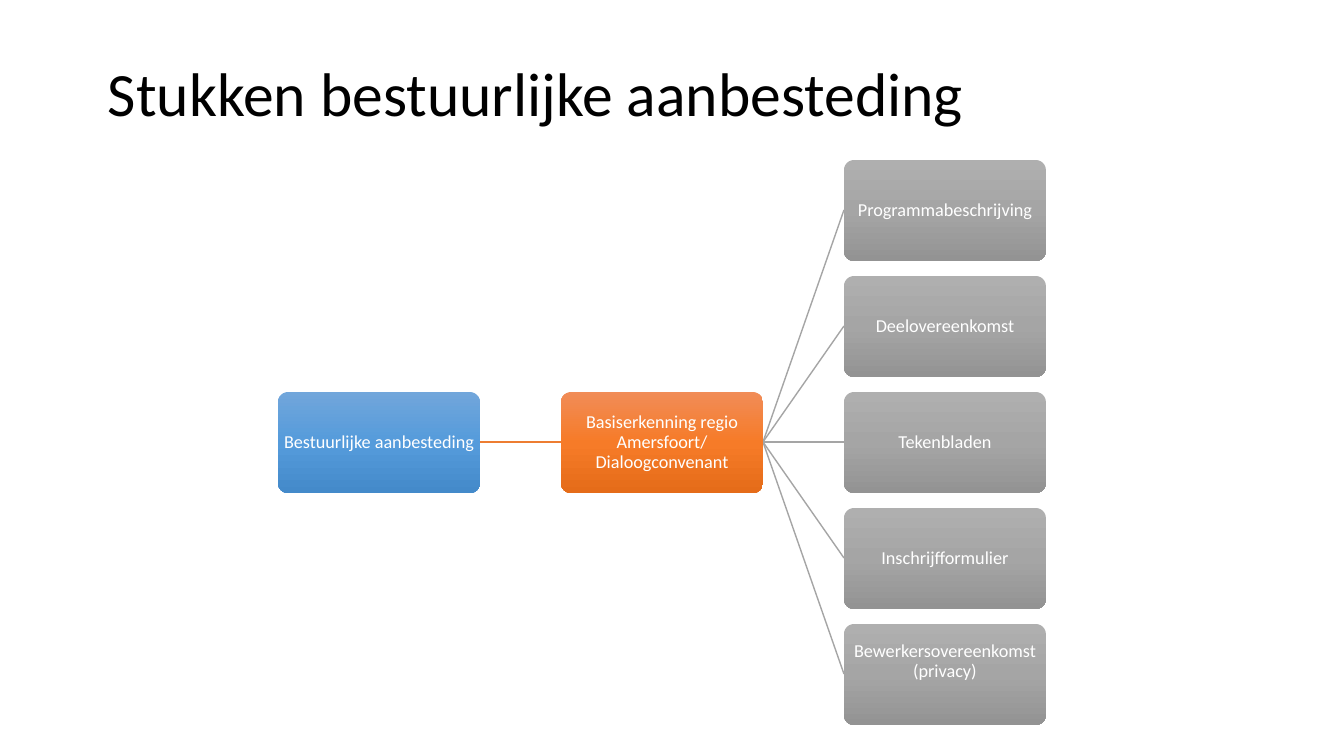
from copy import deepcopy
from dataclasses import dataclass

from lxml import etree
from pptx import Presentation
from pptx.dml.color import RGBColor
from pptx.enum.shapes import MSO_CONNECTOR, MSO_SHAPE
from pptx.enum.text import MSO_ANCHOR, PP_ALIGN
from pptx.oxml.ns import qn
from pptx.util import Emu, Pt

ROUND = MSO_SHAPE.ROUNDED_RECTANGLE
STRAIGHT = MSO_CONNECTOR.STRAIGHT
MIDDLE = MSO_ANCHOR.MIDDLE
LEFT, CENTER = PP_ALIGN.LEFT, PP_ALIGN.CENTER

SCALE = 914400 / 100.8
FONT = "Calibri"
COLORS = {
    "black": "000000",
    "white": "FFFFFF",
    "orange": "ED7D31",
    "gray": "A5A5A5",
}
FADES = {
    "blue": ("71A6DB", "559BDB", "448ACA"),
    "orange": ("F18C57", "F67B28", "E56C19"),
    "gray": ("AFAFAF", "A5A5A5", "939393"),
}
WIDTH, HEIGHT = 202, 101
STEP_X, STEP_Y = 283, 116
ROOT_X, ROOT_Y = 278, 392


@dataclass
class Node:
    text: str
    hue: str
    col: int
    row: int = 0
    base: int = 1

    @property
    def left(self) -> int:
        return ROOT_X + self.col * STEP_X

    @property
    def top(self) -> int:
        return ROOT_Y + self.row * STEP_Y

    @property
    def mid(self) -> int:
        return self.top + HEIGHT // 2


ROOT = Node("Bestuurlijke aanbesteding", "blue", 0)
HUB = Node("Basiserkenning regio Amersfoort/ Dialoogconvenant", "orange", 1)
LEAVES = [
    Node("Programmabeschrijving", "gray", 2, -2),
    Node("Deelovereenkomst", "gray", 2, -1),
    Node("Tekenbladen", "gray", 2),
    Node("Inschrijfformulier", "gray", 2, 1),
    Node("Bewerkersovereenkomst (privacy)", "gray", 2, 2, base=27),
]


def px(size: int) -> Emu:
    return Emu(round(size * SCALE))


def write(shape, text: str, *, size: int, color: str, align=LEFT,
          pads: tuple = (1, 1, 1, 1)) -> None:
    frame = shape.text_frame
    frame.word_wrap = True
    frame.vertical_anchor = MIDDLE
    (frame.margin_left, frame.margin_top,
     frame.margin_right, frame.margin_bottom) = map(px, pads)
    para = frame.paragraphs[0]
    para.alignment = align
    para.line_spacing = 0.9
    run = para.add_run()
    run.text = text
    run.font.name = FONT
    run.font.size = Pt(size)
    run.font.color.rgb = RGBColor.from_string(COLORS[color])


def fade(shape, hue: str) -> None:
    fill = shape.fill
    fill.gradient()
    fill.gradient_angle = 270
    stops = shape._element.spPr.find(qn("a:gradFill")).find(qn("a:gsLst"))
    stops.append(deepcopy(stops[-1]))
    for stop, place, tone in zip(fill.gradient_stops, (0, 0.5, 1), FADES[hue]):
        stop.position = place
        stop.color.rgb = RGBColor.from_string(tone)


def draw_node(slide, node: Node) -> None:
    box = slide.shapes.add_shape(
        ROUND, px(node.left), px(node.top), px(WIDTH), px(HEIGHT))
    box.adjustments[0] = 0.1
    box.shadow.inherit = False
    box.line.fill.background()
    fade(box, node.hue)
    write(box, node.text, size=13, color="white", align=CENTER,
          pads=(1, 1, 1, node.base))


def link(slide, start: Node, end: Node) -> None:
    line = slide.shapes.add_connector(
        STRAIGHT, px(start.left + WIDTH), px(start.mid),
        px(end.left), px(end.mid))
    line.line.color.rgb = RGBColor.from_string(COLORS[end.hue])
    line.line.width = Pt(1)
    etree.SubElement(line._element.spPr, qn("a:effectLst"))


def main() -> None:
    deck = Presentation()
    deck.slide_width, deck.slide_height = px(1344), px(756)
    slide = deck.slides.add_slide(deck.slide_layouts[6])
    title = slide.shapes.add_textbox(px(98), px(57), px(1159), px(80))
    write(title, "Stukken bestuurlijke aanbesteding", size=44, color="black",
          pads=(10, 5, 10, 5))
    link(slide, ROOT, HUB)
    for leaf in LEAVES:
        link(slide, HUB, leaf)
    for node in (ROOT, HUB, *LEAVES):
        draw_node(slide, node)
    deck.save("out.pptx")


if __name__ == "__main__":
    main()
